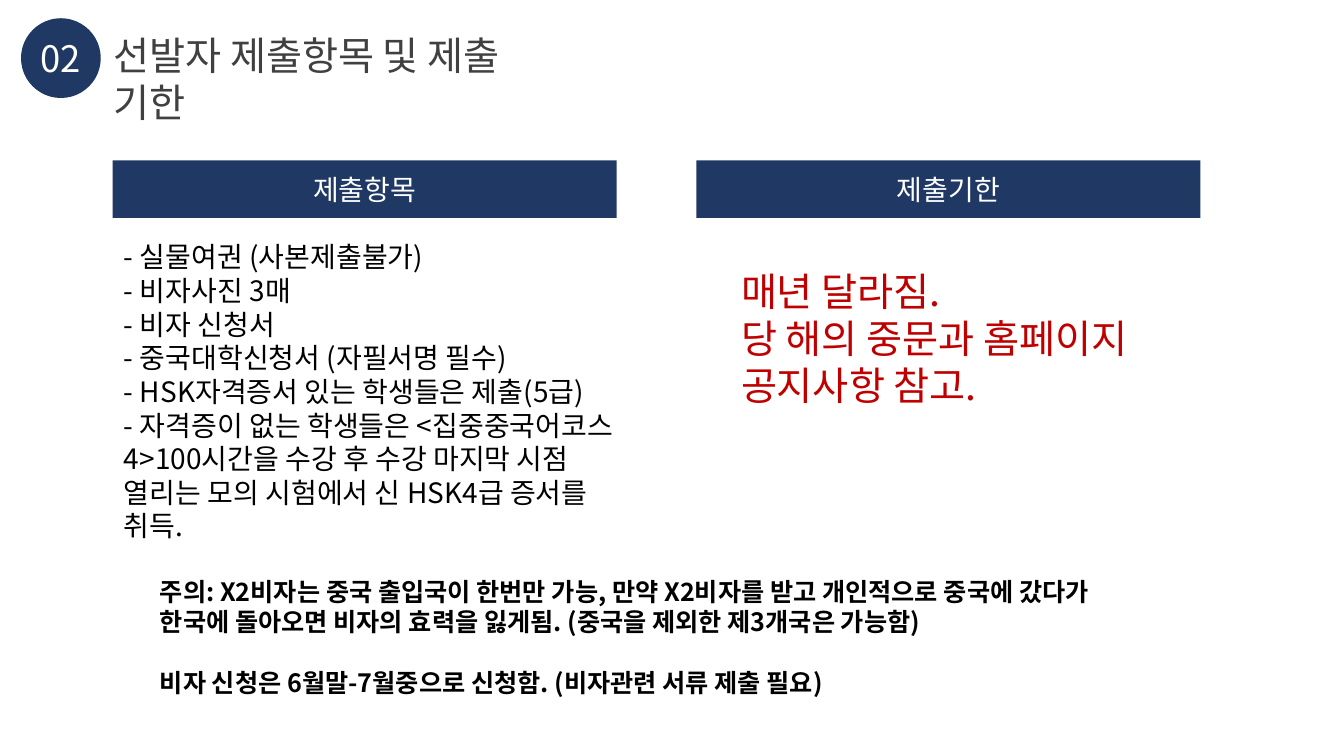
"""Builds the slide on submission items and deadlines for selected students."""
import dataclasses

import lxml.etree
import pptx
import pptx.dml.color
import pptx.enum.shapes
import pptx.enum.text
import pptx.oxml.ns
import pptx.util


@dataclasses.dataclass(frozen=True)
class Theme:
    font: str = "Noto Sans CJK KR"
    navy: str = "203864"
    white: str = "FFFFFF"
    black: str = "000000"
    gray: str = "404040"
    red: str = "C00000"
    heading_size: int = 28
    number_size: int = 26
    body_size: int = 20
    note_size: int = 18


class SlideBuilder:
    def __init__(self, slide, theme):
        self.slide = slide
        self.theme = theme

    def place(self, shape, left, top, width, height):
        shape.left, shape.top, shape.width, shape.height = map(
            pptx.util.Cm, (left, top, width, height))

    def set_text(self, shape, lines, size, color, bold=False, centered=False, gap=0):
        frame = shape.text_frame
        frame.word_wrap = True
        frame.auto_size = pptx.enum.text.MSO_AUTO_SIZE.NONE
        anchors = pptx.enum.text.MSO_ANCHOR
        frame.vertical_anchor = anchors.MIDDLE if centered else anchors.TOP
        frame.text = "\n".join(lines)
        alignments = pptx.enum.text.PP_ALIGN
        for index, paragraph in enumerate(frame.paragraphs):
            paragraph.alignment = alignments.CENTER if centered else alignments.LEFT
            paragraph.space_before = pptx.util.Pt(gap if index else 0)
            paragraph.font.name = self.theme.font
            paragraph.font.size = pptx.util.Pt(size)
            paragraph.font.bold = bold
            paragraph.font.color.rgb = pptx.dml.color.RGBColor.from_string(color)
            self.finish_paragraph(paragraph)

    def finish_paragraph(self, paragraph):
        qualified = pptx.oxml.ns.qn
        properties = paragraph._p.pPr
        properties.set("marL", "0")
        properties.set("indent", "0")
        defaults = properties.find(qualified("a:defRPr"))
        defaults.addprevious(lxml.etree.Element(qualified("a:buNone")))
        east_asian = lxml.etree.SubElement(defaults, qualified("a:ea"))
        east_asian.set("typeface", self.theme.font)

    def placeholder(self, index, box, lines, size, color):
        shape = self.slide.placeholders[index]
        self.place(shape, *box)
        self.set_text(shape, lines, size, color)

    def note(self, box, lines, gap):
        shape = self.slide.shapes.add_textbox(*map(pptx.util.Cm, box))
        self.set_text(shape, lines, self.theme.note_size, self.theme.black,
                      bold=True, gap=gap)

    def label(self, kind, box, text, size):
        shape = self.slide.shapes.add_shape(kind, *map(pptx.util.Cm, box))
        shape.shadow.inherit = False
        shape.fill.solid()
        shape.fill.fore_color.rgb = pptx.dml.color.RGBColor.from_string(self.theme.navy)
        shape.line.fill.background()
        frame = shape.text_frame
        frame.margin_left = frame.margin_right = 0
        self.set_text(shape, [text], size, self.theme.white, centered=True)


def main():
    theme = Theme()
    presentation = pptx.Presentation()
    presentation.slide_width = pptx.util.Cm(33.87)
    presentation.slide_height = pptx.util.Cm(19.05)
    slide = presentation.slides.add_slide(presentation.slide_layouts[3])
    builder = SlideBuilder(slide, theme)
    shapes = pptx.enum.shapes.MSO_SHAPE

    builder.label(shapes.OVAL, (0.53, 0.46, 2.01, 2.01), "02", theme.number_size)
    builder.placeholder(0, (2.6, 0.66, 12.2, 2.64), ["선발자 제출항목 및 제출 기한"],
                        theme.heading_size, theme.gray)
    for left, heading in ((2.84, "제출항목"), (17.55, "제출기한")):
        builder.label(shapes.RECTANGLE, (left, 4.04, 12.7, 1.45), heading, theme.body_size)

    builder.placeholder(1, (2.87, 5.92, 13.49, 7.95), [
        "- 실물여권 (사본제출불가)",
        "- 비자사진 3매",
        "- 비자 신청서",
        "- 중국대학신청서 (자필서명 필수)",
        "- HSK자격증서 있는 학생들은 제출(5급)",
        "- 자격증이 없는 학생들은 <집중중국어코스4>100시간을 수강 후 수강 마지막 시점 "
        "열리는 모의 시험에서 신 HSK4급 증서를 취득.",
    ], theme.body_size, theme.black)
    builder.placeholder(2, (18.42, 6.6, 11.61, 3.84), [
        "매년 달라짐.",
        "당 해의 중문과 홈페이지 공지사항 참고.",
    ], theme.heading_size, theme.red)
    builder.note((3.78, 14.4, 25.27, 3.33), [
        "주의: X2비자는 중국 출입국이 한번만 가능, 만약 X2비자를 받고 개인적으로 중국에 갔다가 "
        "한국에 돌아오면 비자의 효력을 잃게됨. (중국을 제외한 제3개국은 가능함)",
        "비자 신청은 6월말-7월중으로 신청함. (비자관련 서류 제출 필요)",
    ], gap=22)

    presentation.save("out.pptx")


if __name__ == "__main__":
    main()
